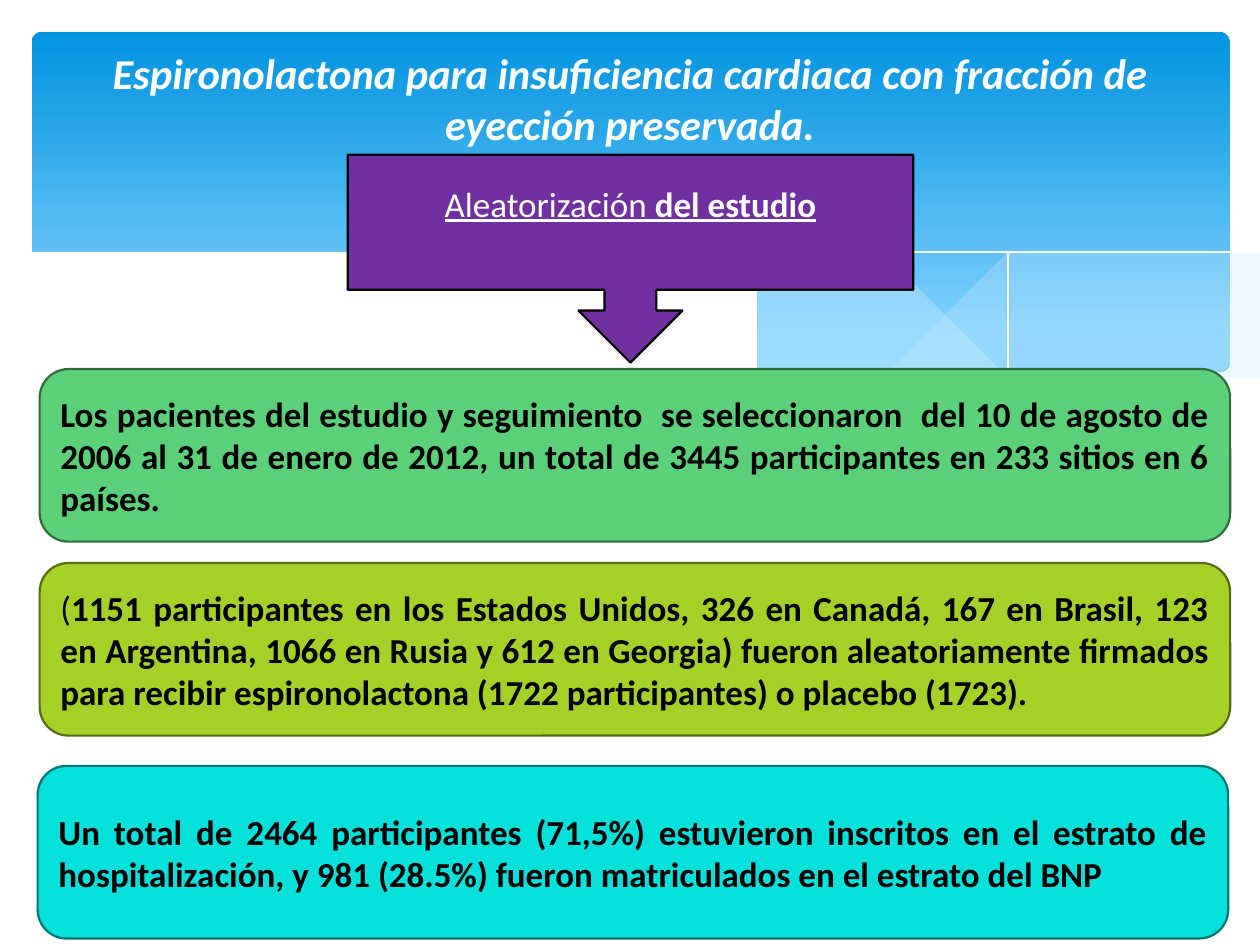
import pptx
import pptx.dml.color
import pptx.enum.shapes
import pptx.enum.text
import pptx.oxml.ns
import pptx.util
import lxml.etree

Cm = pptx.util.Cm
Pt = pptx.util.Pt
RGB = pptx.dml.color.RGBColor.from_string
SHAPE = pptx.enum.shapes.MSO_SHAPE
ALIGN = pptx.enum.text.PP_ALIGN
ANCHOR = pptx.enum.text.MSO_ANCHOR

colors = {
    "sky": "0293E0", "pale_sky": "83D3FE", "mist": "C6E7FC",
    "white": "FFFFFF", "black": "000000", "purple": "7030A0",
    "green": "5BD078", "dark_green": "2F6D3F",
    "lime": "A5D028", "dark_lime": "566D15",
    "cyan": "05E0DB", "dark_cyan": "037572",
}


def smooth(knots, steps=6):
    curve = [knots[0]]
    padded = [knots[0], *knots, knots[-1]]
    for a, b, c, d in zip(padded, padded[1:], padded[2:], padded[3:]):
        for step in range(1, steps + 1):
            t = step / steps
            curve.append(tuple(
                0.5 * (2 * q + (r - p) * t + (2 * p - 5 * q + 4 * r - s) * t ** 2
                       + (3 * q - p - 3 * r + s) * t ** 3)
                for p, q, r, s in zip(a, b, c, d)))
    return curve


def write(shape, runs, align, anchor, insets, base):
    frame = shape.text_frame
    layout = {"word_wrap": True, "vertical_anchor": anchor, **insets}
    for name, value in layout.items():
        setattr(frame, name, value)
    paragraph = frame.paragraphs[0]
    paragraph.alignment = align
    for words, extra in runs:
        run = paragraph.add_run()
        run.text = words
        font_format = {"name": "Calibri", "size": Pt(20), **base, **extra}
        ink = font_format.pop("ink")
        for name, value in font_format.items():
            setattr(run.font, name, value)
        run.font.color.rgb = RGB(colors[ink])


presentation = pptx.Presentation()
presentation.slide_width = Cm(25.4)
presentation.slide_height = Cm(19.05)
slide = presentation.slides.add_slide(presentation.slide_layouts[6])
shapes = slide.shapes

banner = shapes.add_shape(SHAPE.ROUNDED_RECTANGLE, Cm(0.64), Cm(0.64), Cm(24.15), Cm(6.86))
banner.adjustments[0] = 0.03
banner.shadow.inherit = False
banner.line.fill.background()
banner.fill.gradient()
banner.fill.gradient_angle = 270
for stop, (position, color) in zip(banner.fill.gradient_stops, [(0, "sky"), (0.9, "pale_sky")]):
    stop.position = position
    stop.color.rgb = RGB(colors[color])

right_wave = smooth([(9.76, 2), (9.21, 2.1), (8.61, 2.23), (7.79, 2.42), (6.61, 2.65)]) + smooth(
    [(6.61, 2.65), (7.19, 2.72), (7.69, 2.77), (8.14, 2.78), (8.63, 2.75), (9.13, 2.67), (9.76, 2.47)])
middle_wave = smooth([(8.93, 2.73), (8.07, 2.6), (7.06, 2.4), (6.29, 2.22), (5.69, 2.08), (5.14, 1.98),
                      (4.42, 1.89), (3.61, 1.85), (2.86, 1.91)]) + smooth(
    [(2.86, 1.91), (3.62, 2.03), (4.49, 2.22), (5.3, 2.4), (6.18, 2.58), (6.95, 2.7),
     (7.61, 2.77), (8.28, 2.78), (8.93, 2.73)])
long_crest = smooth([(3.09, 1.95), (3.53, 1.89), (4.16, 1.87), (5.1, 1.92), (6.08, 2.04),
                     (6.95, 2.19), (7.95, 2.41), (9.07, 2.72)])
short_crest = smooth([(6.13, 2.57), (6.95, 2.35), (7.76, 2.16), (8.66, 1.99), (9.24, 1.9), (9.75, 1.85)])
white_wave = smooth([(9.77, 2.46), (9.3, 2.62), (8.75, 2.73), (8.09, 2.77), (7.44, 2.74), (6.68, 2.65),
                     (5.79, 2.5), (5.03, 2.33), (4.18, 2.13), (3.4, 1.97), (2.71, 1.88), (2.11, 1.84),
                     (1.61, 1.84), (1.06, 1.89), (0.59, 1.99), (0.23, 2.13)]) + [(0.23, 3.29), (9.77, 3.29)]

for outline, fill, opacity in [
    (right_wave, "mist", 29),
    (middle_wave, "mist", 40),
    (long_crest, None, 100),
    (short_crest, None, 100),
    (white_wave, "white", 100),
]:
    builder = shapes.build_freeform(*outline[0], scale=Cm(2.54))
    builder.add_line_segments(outline[1:], close=fill is not None)
    wave = builder.convert_to_shape()
    wave.shadow.inherit = False
    if fill is None:
        wave.fill.background()
        wave.line.color.rgb = RGB(colors["white"])
        wave.line.width = Pt(0)
        continue
    wave.line.fill.background()
    wave.fill.solid()
    wave.fill.fore_color.rgb = RGB(colors[fill])
    if opacity < 100:
        tint = wave.fill._xPr.find(".//" + pptx.oxml.ns.qn("a:srgbClr"))
        lxml.etree.SubElement(tint, pptx.oxml.ns.qn("a:alpha"), val=str(opacity * 1000))

title = shapes.add_textbox(Cm(1.27), Cm(0.94), Cm(22.86), Cm(3.48))
write(title, [("Espironolactona para insuficiencia cardiaca con fracción de eyección preservada.", {})],
      ALIGN.CENTER, ANCHOR.TOP, {"margin_top": 0},
      {"size": Pt(24.3), "bold": True, "italic": True, "ink": "white"})

bold = {"bold": True}
body = {"ink": "black"}
for kind, box, fill, edge, runs, align, insets, base in [
    (SHAPE.ROUNDED_RECTANGLE, (0.8, 7.44, 24, 3.48), "green", "dark_green",
     [("Los pacientes del estudio y seguimiento  se seleccionaron  del 10 de agosto de 2006 al 31 de enero "
       "de 2012, un total de 3445 participantes en 233 sitios en 6 países.", bold)],
     ALIGN.JUSTIFY, {}, body),
    (SHAPE.DOWN_ARROW_CALLOUT, (7.01, 3.12, 11.4, 4.19), "purple", "black",
     [("Aleatorización ", {}), ("del estudio", bold)],
     ALIGN.CENTER, {"margin_bottom": Cm(0.9)}, {"ink": "white", "underline": True}),
    (SHAPE.ROUNDED_RECTANGLE, (0.8, 11.35, 24, 3.48), "lime", "dark_lime",
     [("(", {}),
      ("1151 participantes en los Estados Unidos, 326 en Canadá, 167 en Brasil, 123 en Argentina, 1066 en "
       "Rusia y 612 en Georgia) fueron aleatoriamente firmados para recibir espironolactona "
       "(1722 participantes) o placebo (1723).", bold)],
     ALIGN.JUSTIFY, {}, body),
    (SHAPE.ROUNDED_RECTANGLE, (0.76, 15.44, 24, 3.48), "cyan", "dark_cyan",
     [("Un total de 2464 participantes (71,5%) estuvieron inscritos en el estrato de hospitalización, "
       "y 981 (28.5%) fueron matriculados en el estrato del BNP", bold)],
     ALIGN.JUSTIFY, {}, body),
]:
    panel = shapes.add_shape(kind, *map(Cm, box))
    panel.shadow.inherit = False
    panel.fill.solid()
    panel.fill.fore_color.rgb = RGB(colors[fill])
    panel.line.color.rgb = RGB(colors[edge])
    panel.line.width = Pt(1.25)
    write(panel, runs, align, ANCHOR.MIDDLE, insets, base)

presentation.save("out.pptx")
